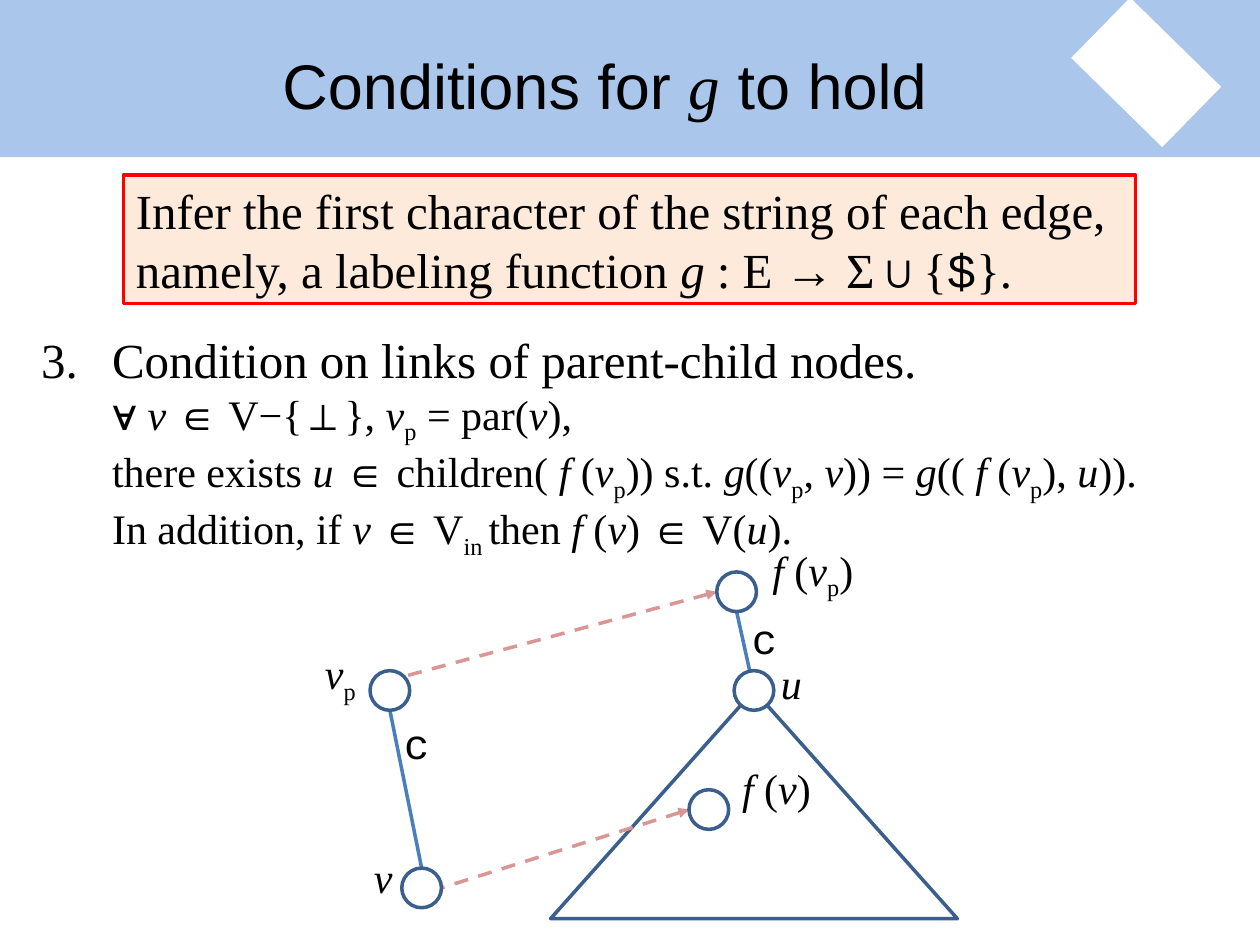
from dataclasses import dataclass
from typing import NamedTuple

from lxml.etree import SubElement
from pptx import Presentation
from pptx.dml.color import RGBColor
from pptx.enum.dml import MSO_LINE_DASH_STYLE as Dash
from pptx.enum.shapes import MSO_CONNECTOR as Connector, MSO_SHAPE as Shape
from pptx.enum.text import MSO_ANCHOR as Anchor, MSO_AUTO_SIZE as AutoSize, PP_ALIGN as Align
from pptx.oxml.ns import qn
from pptx.util import Cm, Pt


@dataclass(frozen=True)
class Theme:
    band: str = "AAC6EA"
    white: str = "FFFFFF"
    ink: str = "000000"
    outline: str = "3A5F8C"
    edge: str = "4B7EBC"
    mapping: str = "D99694"
    callout: str = "FDEADA"
    callout_line: str = "FF0000"
    serif: str = "Times New Roman"
    sans: str = "Arial"
    mono: str = "Courier New"
    title: int = 36
    lead: int = 28
    detail: int = 24
    stroke: float = 2


THEME = Theme()


class Run(NamedTuple):
    text: str
    italic: bool = False
    subscript: bool = False
    font: str = THEME.serif
    size: int = THEME.detail


class Node(NamedTuple):
    """Circle of the tree, given by its centre in cm."""
    x: float
    y: float


class Label(NamedTuple):
    left: float
    top: float
    width: float
    runs: list


def var(text: str, size: int = THEME.detail) -> Run:
    return Run(text, italic=True, size=size)


def sub(text: str) -> Run:
    return Run(text, subscript=True)


def lead(text: str, font: str = THEME.serif) -> Run:
    return Run(text, font=font, size=THEME.lead)


RADIUS = 0.4
DIAGONAL = RADIUS * 0.71
VP, V = Node(7.86, 13.92), Node(8.5, 17.9)
F_VP, U, F_V = Node(14.85, 11.93), Node(15.2, 13.92), Node(14.29, 16.32)
V_PARENT = [var("v"), sub("p")]
F_OF = [var("f"), Run(" (")]
F_V_PARENT = [*F_OF, *V_PARENT]

TITLE = [Run("Conditions for ", font=THEME.sans, size=THEME.title),
         var("g", THEME.title),
         Run(" to hold", font=THEME.sans, size=THEME.title)]
GOAL = [lead("Infer the first character of the string of each edge, "
             "namely, a labeling function "),
        var("g", THEME.lead), lead(" : E → Σ∪{"), lead("$", THEME.mono), lead("}.")]
CONDITION = [
    [lead("Condition on links of parent-child nodes.")],
    [Run("∀ "), var("v "), Run("∈ V−{⊥}, "), *V_PARENT, Run(" = par("), var("v"), Run("), ")],
    [Run("there exists "), var("u"), Run(" ∈ children( "), *F_V_PARENT, Run(")) s.t. "),
     var("g"), Run("(("), *V_PARENT, Run(", "), var("v"), Run(")) = "),
     var("g"), Run("(( "), *F_V_PARENT, Run("), "), var("u"), Run(")).")],
    [Run("In addition, if "), var("v "), Run("∈ V"), sub("in "), Run("then "),
     *F_OF, var("v"), Run(") ∈ V("), var("u"), Run(").")],
]
EDGE_CHARACTER = [Run("c", font=THEME.mono)]
LABELS = [
    Label(15.32, 10.85, 2.18, [*F_V_PARENT, Run(")")]),
    Label(6.3, 12.93, 1.17, V_PARENT),
    Label(7.29, 17.04, 0.89, [var("v")]),
    Label(7.9, 14.33, 1.02, EDGE_CHARACTER),
    Label(15.49, 13.13, 0.94, [var("u")]),
    Label(14.91, 12.22, 1.02, EDGE_CHARACTER),
    Label(14.71, 15.24, 1.9, [*F_OF, var("v"), Run(")")]),
]


def rgb(value: str) -> RGBColor:
    return RGBColor.from_string(value)


def add_runs(paragraph, runs: list) -> None:
    for item in runs:
        run = paragraph.add_run()
        run.text = item.text
        font = run.font
        font.name, font.size, font.italic = item.font, Pt(item.size), item.italic
        font.color.rgb = rgb(THEME.ink)
        if item.subscript:
            run._r.get_or_add_rPr().set("baseline", "-25000")


def add_text(slide, left: float, top: float, width: float, height: float, wrap: bool = True):
    frame = slide.shapes.add_textbox(Cm(left), Cm(top), Cm(width), Cm(height)).text_frame
    frame.word_wrap = wrap
    return frame


def add_figure(slide, kind, left: float, top: float, width: float, height: float,
               fill: str = THEME.white, line: str | None = THEME.outline):
    figure = slide.shapes.add_shape(kind, Cm(left), Cm(top), Cm(width), Cm(height))
    figure.shadow.inherit = False
    figure.fill.solid()
    figure.fill.fore_color.rgb = rgb(fill)
    if line:
        figure.line.color.rgb = rgb(line)
        figure.line.width = Pt(THEME.stroke)
    else:
        figure.line.fill.background()
    return figure


def add_line(slide, start: tuple, end: tuple, color: str, width: float = THEME.stroke):
    line = slide.shapes.add_connector(Connector.STRAIGHT, *(Cm(v) for v in (*start, *end)))
    line.line.color.rgb = rgb(color)
    line.line.width = Pt(width)
    SubElement(line._element.spPr, qn("a:effectLst"))
    return line


def add_mapping(slide, target: Node, source: tuple) -> None:
    """Dashed arrow that points at the left side of the target node."""
    arrow = add_line(slide, (target.x - RADIUS, target.y), source, THEME.mapping)
    arrow.line.dash_style = Dash.DASH
    SubElement(arrow.line._get_or_add_ln(), qn("a:headEnd"), type="triangle")


def add_header(slide) -> None:
    add_line(slide, (0, 1.57), (25.4, 1.57), THEME.band, 90)
    add_figure(slide, Shape.RECTANGLE, 21.82, 0.61, 2.57, 1.7, line=None).rotation = 44.4
    frame = add_text(slide, 0.58, 0.41, 23.22, 2.59)
    frame.vertical_anchor = Anchor.MIDDLE
    frame.paragraphs[0].alignment = Align.CENTER
    add_runs(frame.paragraphs[0], TITLE)


def add_condition(slide) -> None:
    frame = add_text(slide, 0.58, 6.32, 24.21, 10.69)
    frame.margin_top = Cm(0.32)
    paragraph = frame.paragraphs[0]
    properties = paragraph._p.get_or_add_pPr()
    properties.set("marL", str(Cm(1.43)))
    properties.set("indent", str(-Cm(1.43)))
    SubElement(properties, qn("a:buFont"), typeface=THEME.serif)
    SubElement(properties, qn("a:buAutoNum"), type="arabicPeriod", startAt="3")
    for number, runs in enumerate(CONDITION):
        if number:
            paragraph.add_line_break()
        add_runs(paragraph, runs)


def add_goal(slide) -> None:
    frame = add_figure(slide, Shape.RECTANGLE, 2.49, 3.53, 20.4, 2.59,
                       THEME.callout, THEME.callout_line).text_frame
    frame.word_wrap = True
    frame.vertical_anchor = Anchor.MIDDLE
    frame.paragraphs[0].alignment = Align.LEFT
    add_runs(frame.paragraphs[0], GOAL)


def add_trees(slide) -> None:
    add_figure(slide, Shape.ISOSCELES_TRIANGLE, U.x - 4.1, U.y, 8.2, 4.6)
    add_line(slide, (VP.x, VP.y + RADIUS), (V.x, V.y - RADIUS), THEME.edge)
    add_line(slide, (F_VP.x, F_VP.y + RADIUS), U, THEME.edge)
    add_mapping(slide, F_VP, (VP.x + DIAGONAL, VP.y - DIAGONAL))
    add_mapping(slide, F_V, (V.x + RADIUS, V.y))
    for node in (VP, V, F_VP, U, F_V):
        add_figure(slide, Shape.OVAL, node.x - RADIUS, node.y - RADIUS, 2 * RADIUS, 2 * RADIUS)
    for label in LABELS:
        frame = add_text(slide, label.left, label.top, label.width, 1.27, wrap=False)
        frame.auto_size = AutoSize.SHAPE_TO_FIT_TEXT
        add_runs(frame.paragraphs[0], label.runs)


def main() -> None:
    deck = Presentation()
    deck.slide_width, deck.slide_height = Cm(25.4), Cm(19.05)
    slide = deck.slides.add_slide(deck.slide_layouts[6])
    add_header(slide)
    add_condition(slide)
    add_trees(slide)
    add_goal(slide)
    deck.save("out.pptx")


if __name__ == "__main__":
    main()
